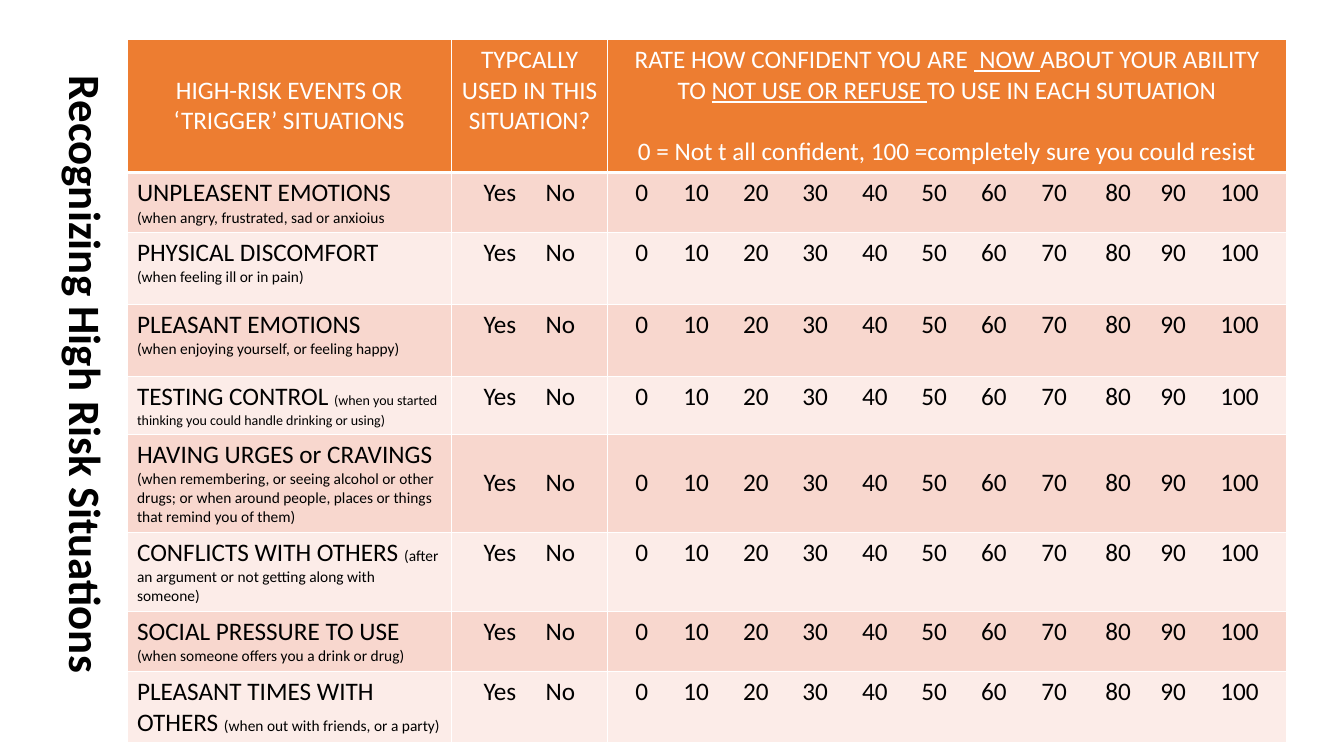
from lxml.etree import SubElement
from pptx import Presentation
from pptx.dml.color import RGBColor
from pptx.enum.text import MSO_ANCHOR, PP_ALIGN
from pptx.oxml import parse_xml
from pptx.oxml.ns import nsdecls, qn
from pptx.util import Pt

TITLE = "Recognizing High Risk Situations"
EVENT_HEADING = [[("HIGH-RISK EVENTS OR ‘TRIGGER’ SITUATIONS", 18, False)]]
USED_HEADING = [
    [("TYPCALLY USED IN THIS", 18, False)],
    [("SITUATION?", 18, False)],
]
RATING_HEADING = [
    [
        ("RATE HOW CONFIDENT YOU ARE ", 18, False),
        (" NOW ", 18, True),
        ("ABOUT YOUR ABILITY TO ", 18, False),
        ("NOT USE OR REFUSE ", 18, True),
        ("TO USE IN EACH SUTUATION", 18, False),
    ],
    [("0 = Not t all confident, 100 =completely sure you could resist", 18, False)],
]
SITUATIONS = [
    ("UNPLEASENT EMOTIONS", "(when angry, frustrated, sad or anxioius", 11, True),
    ("PHYSICAL DISCOMFORT", "(when feeling ill or in pain)", 11, True),
    ("PLEASANT EMOTIONS", "(when enjoying yourself, or feeling happy)", 11, True),
    ("TESTING CONTROL ",
     "(when you started thinking you could handle drinking or using)", 10, False),
    ("HAVING URGES or CRAVINGS ",
     "(when remembering, or seeing alcohol or other drugs; or when around people, "
     "places or things that remind you of them)", 11, False),
    ("CONFLICTS WITH OTHERS ",
     "(after an argument or not getting along with someone)", 11, False),
    ("SOCIAL PRESSURE TO USE", "(when someone offers you a drink or drug)", 11, True),
    ("PLEASANT TIMES WITH OTHERS ", "(when out with friends, or a party)", 11, False),
]
CENTRED_ROW = 5
ANSWERS = ("Yes", "No")
RATINGS = [str(value) for value in range(0, 101, 10)]

COLUMN_WIDTHS = (231.8, 111.6, 484.6)
ROW_HEIGHTS = (95, 42.5, 51.4, 51.4, 41.4, 69.5, 56.6, 42.5, 51)
ANSWER_START, ANSWER_TABS = 22.9, (44.3,)
RATING_START = 19.7
RATING_TABS = (34.3, 77, 119.3, 162, 204.3, 247, 290, 335.7, 375, 418)
WHITE, BLACK, ORANGE = "FFFFFF", "000000", "ED7D31"
BANDS = ("F8D7CE", "FCECE8")


def color(value):
    return RGBColor.from_string(value)


def style(span, size, shade, bold=False):
    span.font.name = "Calibri"
    span.font.size = Pt(size)
    span.font.bold = bold
    span.font.color.rgb = color(shade)


def write(cell, paragraphs, shade, align):
    frame = cell.text_frame
    for index, spans in enumerate(paragraphs):
        para = frame.add_paragraph() if index else frame.paragraphs[0]
        para.alignment = align
        for text, size, underlined in spans:
            span = para.add_run()
            span.text = text
            style(span, size, shade)
            if underlined:
                span.font.underline = True


def write_choices(cell, choices, start, stops):
    write(cell, [[("\t".join(choices), 18, False)]], BLACK, PP_ALIGN.LEFT)
    cell.margin_left = Pt(start)
    cell.margin_right = 0
    properties = cell.text_frame.paragraphs[0]._p.get_or_add_pPr()
    tabs = SubElement(properties, qn("a:tabLst"))
    for stop in stops:
        SubElement(tabs, qn("a:tab"), pos=str(int(Pt(stop))), algn="l")


def paint(cell, fill, bottom):
    cell.fill.solid()
    cell.fill.fore_color.rgb = color(fill)
    properties = cell._tc.get_or_add_tcPr()
    for index, (side, width) in enumerate(
        (("lnL", 1), ("lnR", 1), ("lnT", 1), ("lnB", bottom))
    ):
        border = parse_xml(
            f'<a:{side} {nsdecls("a")} w="{int(Pt(width))}"><a:solidFill>'
            f'<a:srgbClr val="{WHITE}"/></a:solidFill></a:{side}>'
        )
        properties.insert(index, border)


def add_title(page):
    title = page.shapes.title
    title.left, title.top = Pt(-162.7), Pt(221)
    title.width, title.height = Pt(445), Pt(92.9)
    title.rotation = 90
    frame = title.text_frame
    frame.text = TITLE
    frame.vertical_anchor = MSO_ANCHOR.MIDDLE
    para = frame.paragraphs[0]
    para.alignment = PP_ALIGN.CENTER
    para.line_spacing = 0.9
    style(para.runs[0], 32, BLACK, True)


def add_worksheet(page):
    table = page.shapes.add_table(
        len(ROW_HEIGHTS), len(COLUMN_WIDTHS), Pt(90.7), Pt(28.1),
        Pt(sum(COLUMN_WIDTHS)), Pt(sum(ROW_HEIGHTS)),
    ).table
    for column, width in zip(table.columns, COLUMN_WIDTHS):
        column.width = Pt(width)
    for row, height in zip(table.rows, ROW_HEIGHTS):
        row.height = Pt(height)

    for column, heading in enumerate((EVENT_HEADING, USED_HEADING, RATING_HEADING)):
        cell = table.cell(0, column)
        write(cell, heading, WHITE, PP_ALIGN.CENTER)
        paint(cell, ORANGE, 3)
    table.cell(0, 0).vertical_anchor = MSO_ANCHOR.MIDDLE
    table.cell(0, 2).text_frame.paragraphs[1].space_before = Pt(22)

    for row, (name, detail, size, separate) in enumerate(SITUATIONS, 1):
        event, answer, rating = (table.cell(row, column) for column in range(3))
        heading, note = (name, 18, False), (detail, size, False)
        paragraphs = [[heading], [note]] if separate else [[heading, note]]
        write(event, paragraphs, BLACK, PP_ALIGN.LEFT)
        write_choices(answer, ANSWERS, ANSWER_START, ANSWER_TABS)
        write_choices(rating, RATINGS, RATING_START, RATING_TABS)
        for cell in (event, answer, rating):
            paint(cell, BANDS[(row - 1) % 2], 1)
        if row == CENTRED_ROW:
            answer.vertical_anchor = MSO_ANCHOR.MIDDLE
            rating.vertical_anchor = MSO_ANCHOR.MIDDLE


def main():
    deck = Presentation()
    deck.slide_width, deck.slide_height = Pt(960), Pt(540)
    page = deck.slides.add_slide(deck.slide_layouts[5])
    add_title(page)
    add_worksheet(page)
    deck.save("out.pptx")


if __name__ == "__main__":
    main()
